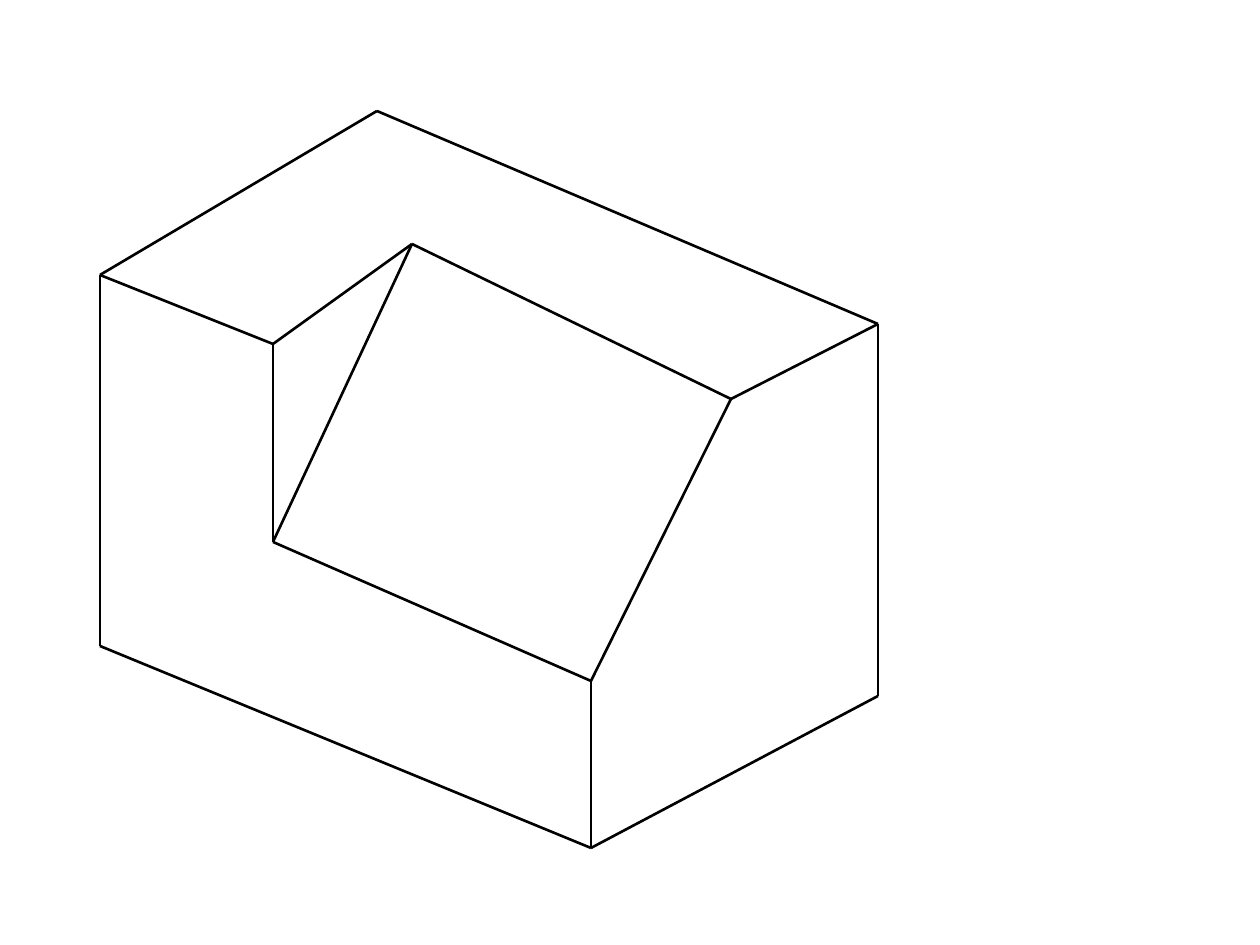
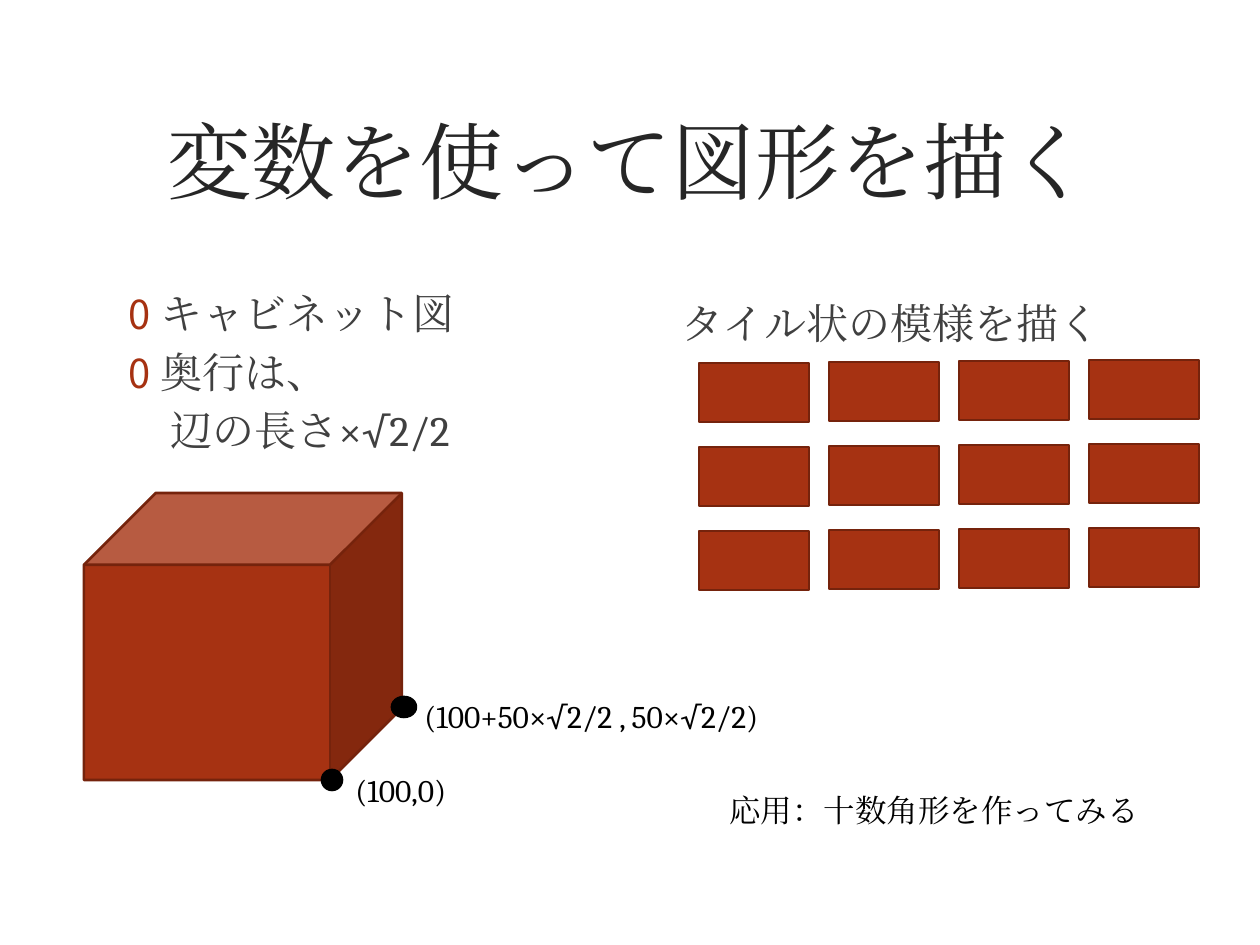
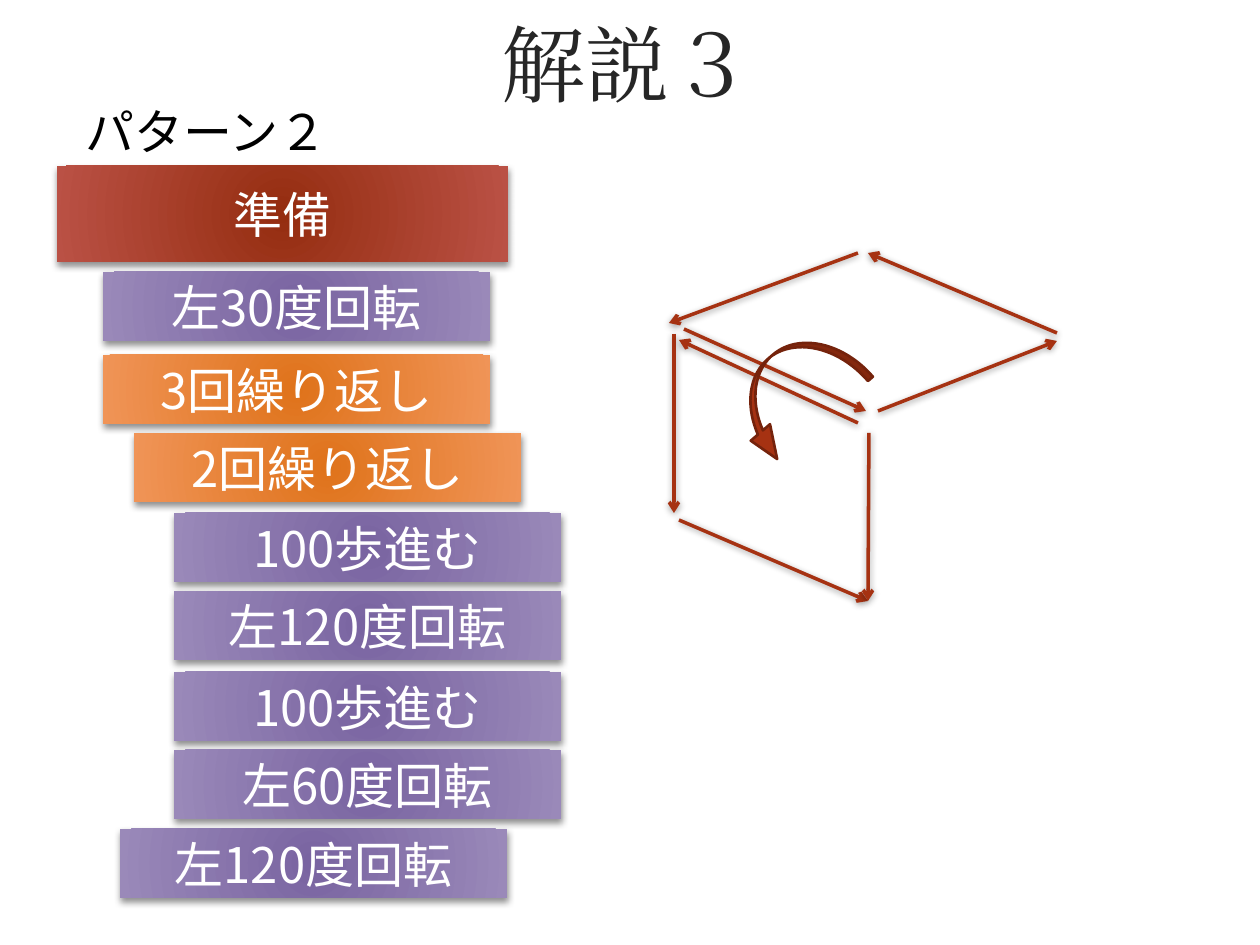
from dataclasses import dataclass

from lxml import etree
from pptx import Presentation
from pptx.dml.color import RGBColor
from pptx.enum.shapes import MSO_CONNECTOR, MSO_SHAPE as SHAPE
from pptx.enum.text import MSO_ANCHOR as ANCHOR, MSO_AUTO_SIZE as AUTO, PP_ALIGN as ALIGN
from pptx.oxml import parse_xml
from pptx.oxml.ns import nsdecls, qn
from pptx.util import Inches, Pt

PX = 7257  # EMU in one px, 126 px to the inch


@dataclass(frozen=True)
class Theme:
    serif: str = "Cambria"
    sans: str = "Noto Sans CJK JP"
    black: str = "000000"
    white: str = "FFFFFF"
    title: str = "262626"
    body: str = "404040"
    accent: str = "A63212"
    edge: str = "75230C"
    red: tuple = ("952D10", "BA5145")
    purple: tuple = ("7964A1", "9A89B9")
    orange: tuple = ("DF731B", "F09457")
    title_size: int = 48
    block_size: int = 28
    body_size: int = 24
    label_size: int = 18
    outline: float = 1.5
    arrow: float = 2


T = Theme()
SHADOW = (
    f'<a:effectLst {nsdecls("a")}><a:outerShdw blurRad="50800" dist="%d" dir="%d" rotWithShape="0">'
    '<a:srgbClr val="000000"><a:alpha val="%d"/></a:srgbClr></a:outerShdw></a:effectLst>'
)
BLOCK_SHADOW = SHADOW % (25400, 84 * 60000, 44000)
ARROW_SHADOW = SHADOW % (12700, 90 * 60000, 37000)
NO_SHADOW = f'<a:effectLst {nsdecls("a")}/>'
GRADIENT = (
    f'<a:gradFill {nsdecls("a")} rotWithShape="1"><a:gsLst>'
    '<a:gs pos="0"><a:srgbClr val="%s"/></a:gs><a:gs pos="100000"><a:srgbClr val="%s"/></a:gs></a:gsLst>'
    '<a:path path="circle"><a:fillToRect l="40000" t="100000" r="40000" b="100000"/></a:path></a:gradFill>'
)


def write(tf, *lines, size, color, font=T.serif, align=ALIGN.LEFT, anchor=ANCHOR.TOP, auto=AUTO.NONE):
    tf.word_wrap = True
    tf.auto_size = auto
    tf.vertical_anchor = anchor
    for i, line in enumerate(lines):
        p = tf.add_paragraph() if i else tf.paragraphs[0]
        p.alignment = align
        p.space_before = Pt(size * 0.2 if i else 0)
        r = p.add_run()
        r.text = line
        r.font.size = Pt(size)
        r.font.name = font
        r.font.color.rgb = RGBColor.from_string(color)
        etree.SubElement(r.font._element, qn("a:ea"), typeface=font)


def add_line(s, start, end, color, width, effect):
    line = s.shapes.add_connector(MSO_CONNECTOR.STRAIGHT, *[v * PX for v in (*start, *end)])
    line.line.color.rgb = RGBColor.from_string(color)
    line.line.width = Pt(width)
    line._element.spPr.append(parse_xml(effect))
    return line


prs = Presentation()
prs.slide_width, prs.slide_height = Inches(10), Inches(7.5)
solid, drawing, answer = [prs.slides.add_slide(prs.slide_layouts[i]) for i in (6, 1, 5)]

# Solid with a sloping cut
corners = {
    "left top": (100, 275), "left bottom": (100, 646), "front bottom": (591, 848),
    "front top": (591, 681), "right top": (878, 324), "right bottom": (878, 696),
    "back": (377, 111), "notch top": (273, 344), "notch bottom": (273, 542),
    "slope left": (412, 244), "slope right": (731, 399),
}
outlines = [
    ("left top", "left bottom", "front bottom", "right bottom", "right top", "back", "left top"),
    ("left top", "notch top", "notch bottom", "front top", "front bottom"),
    ("notch top", "slope left", "slope right", "right top"),
    ("notch bottom", "slope left"),
    ("slope right", "front top"),
]
for outline in outlines:
    for a, b in zip(outline, outline[1:]):
        add_line(solid, corners[a], corners[b], T.black, T.outline, NO_SHADOW)

# Titles
for s, text, box in [
    (drawing, "変数を使って図形を描く", (76, 60, 1108, 199)),
    (answer, "解説３", (74, 0, 1108, 125)),
]:
    sp = s.shapes.title
    sp.left, sp.top, sp.width, sp.height = [v * PX for v in box]
    write(sp.text_frame, text, size=T.title_size, color=T.title, align=ALIGN.CENTER, anchor=ANCHOR.MIDDLE)

# List on the drawing slide
sp = drawing.placeholders[1]
sp.left, sp.top, sp.width, sp.height = [v * PX for v in (116, 281, 396, 202)]
write(sp.text_frame, "キャビネット図", "奥行は、", "辺の長さ×√2/2", size=T.body_size, color=T.body)
*bulleted, plain = [p._p.get_or_add_pPr() for p in sp.text_frame.paragraphs]
for pPr in bulleted:
    pPr.set("marL", str(Inches(0.25)))
    pPr.set("indent", str(-Inches(0.25)))
    color = etree.SubElement(pPr, qn("a:buClr"))
    etree.SubElement(color, qn("a:srgbClr"), val=T.accent)
    etree.SubElement(pPr, qn("a:buSzPct"), val="95000")
    etree.SubElement(pPr, qn("a:buFont"), typeface=T.sans)
    etree.SubElement(pPr, qn("a:buChar"), char="0")
plain.set("marL", str(42 * PX))
plain.set("indent", "0")
etree.SubElement(plain, qn("a:buNone"))

# Command blocks
step_w, step_h = 387, 69
blocks = [
    ("準備", (57, 166, 451, 96), T.red),
    ("左30度回転", (103, 272, step_w, step_h), T.purple),
    ("3回繰り返し", (103, 355, step_w, step_h), T.orange),
    ("2回繰り返し", (134, 433, step_w, step_h), T.orange),
    ("100歩進む", (174, 513, step_w, step_h), T.purple),
    ("左120度回転", (174, 591, step_w, step_h), T.purple),
    ("100歩進む", (174, 672, step_w, step_h), T.purple),
    ("左60度回転", (174, 750, step_w, step_h), T.purple),
    ("左120度回転", (120, 829, step_w, step_h), T.purple),
]
for text, box, colors in blocks:
    sp = answer.shapes.add_shape(SHAPE.RECTANGLE, *[v * PX for v in box])
    sp.line.fill.background()
    spPr = sp._element.spPr
    spPr.insert(2, parse_xml(GRADIENT % colors))
    spPr.append(parse_xml(BLOCK_SHADOW))
    write(sp.text_frame, text, size=T.block_size, color=T.white, font=T.sans,
          align=ALIGN.CENTER, anchor=ANCHOR.MIDDLE)

# Path of the pen
moves = [
    ((878, 411), (1057, 341)), ((1057, 333), (868, 253)),
    ((858, 253), (669, 323)), ((674, 334), (674, 513)),
    ((679, 520), (868, 601)), ((684, 329), (866, 411)),
    ((858, 423), (679, 340)), ((869, 433), (868, 601)),
]
for start, end in moves:
    move = add_line(answer, start, end, T.accent, T.arrow, ARROW_SHADOW)
    etree.SubElement(move.line._get_or_add_ln(), qn("a:tailEnd"), type="arrow")

# Cube, corner dots, tiles and turning arrow
figures = [
    (drawing, SHAPE.CUBE, (84, 493, 318, 287), T.accent, T.edge),
    (drawing, SHAPE.OVAL, (322, 770, 20, 20), T.black, T.black),
    (drawing, SHAPE.OVAL, (392, 697, 24, 20), T.black, T.black),
    (answer, SHAPE.CURVED_UP_ARROW, (724, 350, 139, 82), T.accent, T.edge),
]
figures += [
    (drawing, SHAPE.RECTANGLE, (699 + 130 * col, 363 + 84 * row - col, 110, 59), T.accent, T.edge)
    for row in range(3) for col in range(4)
]
for s, kind, box, fill, edge in figures:
    sp = s.shapes.add_shape(kind, *[v * PX for v in box])
    sp.shadow.inherit = False
    sp.fill.solid()
    sp.fill.fore_color.rgb = RGBColor.from_string(fill)
    sp.line.color.rgb = RGBColor.from_string(edge)
    sp.line.width = Pt(T.outline)
    if kind == SHAPE.CURVED_UP_ARROW:
        sp.rotation = 139.3
        for i, value in enumerate((0.08, 0.31, 0.38)):
            sp.adjustments[i] = value

# Labels
small = dict(size=T.label_size, color=T.black, auto=AUTO.SHAPE_TO_FIT_TEXT)
labels = [
    (drawing, "(100,0)", (343, 765, 218, 50), small),
    (drawing, "(100+50×√2/2 , 50×√2/2)", (412, 691, 476, 50), small),
    (drawing, "応用：十数角形を作ってみる", (717, 785, 486, 50), small),
    (drawing, "タイル状の模様を描く", (669, 291, 515, 202), dict(size=T.body_size, color=T.body)),
    (answer, "パターン２", (73, 95, 417, 72), small | dict(size=T.block_size, font=T.sans)),
]
for s, text, box, style in labels:
    sp = s.shapes.add_textbox(*[v * PX for v in box])
    write(sp.text_frame, text, **style)

prs.save("out.pptx")
